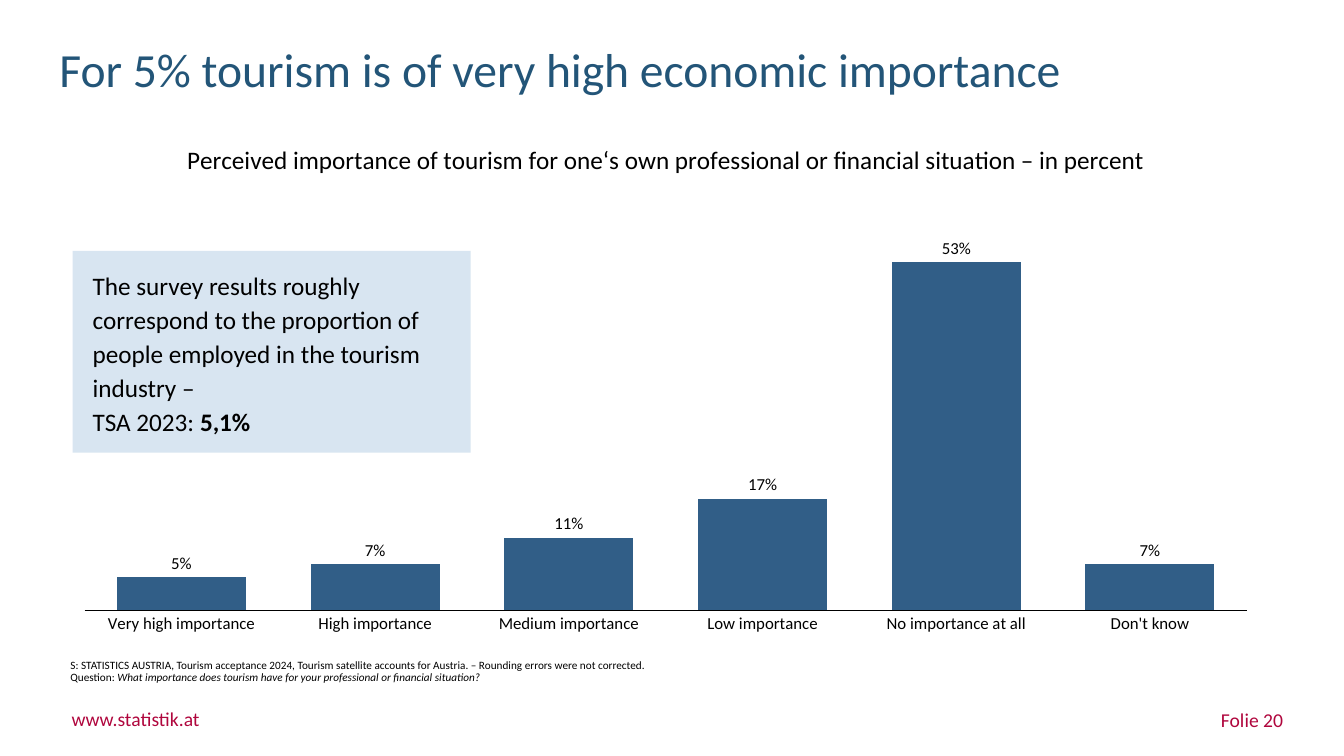
from pptx import Presentation
from pptx.chart.data import CategoryChartData
from pptx.dml.color import RGBColor
from pptx.enum.chart import XL_CHART_TYPE as ChartType, XL_LABEL_POSITION as LabelPosition
from pptx.enum.chart import XL_TICK_MARK as TickMark
from pptx.enum.shapes import MSO_SHAPE as Shape
from pptx.enum.text import MSO_ANCHOR as Anchor, PP_ALIGN as Align
from pptx.oxml import parse_xml
from pptx.oxml.ns import nsdecls
from pptx.util import Pt

FONT = "Calibri"
BLACK = RGBColor(0x00, 0x00, 0x00)
TITLE_BLUE = RGBColor(0x23, 0x55, 0x78)
BAR_BLUE = RGBColor(0x31, 0x5E, 0x87)
PALE_BLUE = RGBColor(0xD8, 0xE5, 0xF1)
FOOTER_RED = RGBColor(0xB0, 0x06, 0x3D)

IMPORTANCE = {
    "Very high importance": 0.05,
    "High importance": 0.07,
    "Medium importance": 0.11,
    "Low importance": 0.17,
    "No importance at all": 0.53,
    "Don't know": 0.07,
}


def style_font(font, size, color=BLACK):
    font.name = FONT
    font.size = Pt(size)
    font.color.rgb = color


def set_frame(frame, margin_x, margin_y, anchor=Anchor.TOP):
    frame.word_wrap = True
    frame.vertical_anchor = anchor
    frame.margin_left = frame.margin_right = Pt(margin_x)
    frame.margin_top = frame.margin_bottom = Pt(margin_y)


def write_paragraph(paragraph, text, size, color=BLACK, align=Align.LEFT, spacing=1.0):
    paragraph.text = text
    paragraph.alignment = align
    paragraph.line_spacing = spacing
    style_font(paragraph.font, size, color)


def add_text(slide, box, text, size, color=BLACK, margins=(0, 0),
             anchor=Anchor.TOP, align=Align.LEFT, spacing=1.0):
    """Add a one-paragraph text box and return its paragraph."""
    frame = slide.shapes.add_textbox(*map(Pt, box)).text_frame
    set_frame(frame, *margins, anchor)
    paragraph = frame.paragraphs[0]
    write_paragraph(paragraph, text, size, color, align, spacing)
    return paragraph


def set_plot_layout(chart, x, y, width, height):
    """Fix the inner plot area, in fractions of the chart."""
    values = "".join(f'<c:{tag} val="{value}"/>' for tag, value in
                     (("x", x), ("y", y), ("w", width), ("h", height)))
    plot_area = chart.plots[0]._element.getparent()
    for layout in plot_area.findall("{*}layout"):
        plot_area.remove(layout)
    plot_area.insert(0, parse_xml(
        f'<c:layout {nsdecls("c")}><c:manualLayout><c:layoutTarget val="inner"/>'
        f'<c:xMode val="edge"/><c:yMode val="edge"/>{values}</c:manualLayout></c:layout>'))


def add_importance_chart(slide):
    data = CategoryChartData(number_format="0%")
    data.categories = list(IMPORTANCE)
    data.add_series("Series 1", list(IMPORTANCE.values()))
    chart = slide.shapes.add_chart(
        ChartType.COLUMN_CLUSTERED, Pt(43.2), Pt(87.1), Pt(864.7), Pt(375.1), data).chart
    chart.has_legend = False
    style_font(chart.font, 10)

    title = chart.chart_title.text_frame.paragraphs[0]
    title.text = ("Perceived importance of tourism for one‘s own professional "
                  "or financial situation – in percent")
    style_font(title.font, 18)
    title.font.bold = False

    categories = chart.category_axis
    categories.major_tick_mark = categories.minor_tick_mark = TickMark.NONE
    categories.format.line.color.rgb = BLACK
    categories.format.line.width = Pt(1)
    style_font(categories.tick_labels.font, 12)

    values = chart.value_axis
    values.minimum_scale = 0
    values.maximum_scale = 0.6
    values.has_major_gridlines = False
    values.visible = False

    plot = chart.plots[0]
    plot.vary_by_categories = False
    plot.gap_width = 50
    plot.overlap = -27
    fill = plot.series[0].format.fill
    fill.solid()
    fill.fore_color.rgb = BAR_BLUE

    plot.has_data_labels = True
    labels = plot.data_labels
    labels.show_value = True
    labels.number_format = "0%"
    labels.number_format_is_linked = False
    labels.position = LabelPosition.OUTSIDE_END
    style_font(labels.font, 12)
    set_plot_layout(chart, 0.02, 0.18, 0.96, 0.75)


def add_survey_note(slide):
    note = slide.shapes.add_shape(Shape.RECTANGLE, Pt(51.8), Pt(179.3), Pt(284.4), Pt(144))
    note.shadow.inherit = False
    note.fill.solid()
    note.fill.fore_color.rgb = PALE_BLUE
    note.line.fill.background()
    frame = note.text_frame
    set_frame(frame, 14.4, 11.5)
    write_paragraph(
        frame.paragraphs[0],
        "The survey results roughly correspond to the proportion of people "
        "employed in the tourism industry –", 18, spacing=1.12)
    share = frame.add_paragraph()
    write_paragraph(share, "TSA 2023:", 18, spacing=1.12)
    run = share.add_run()
    run.text = " 5,1%"
    run.font.bold = True


def main():
    presentation = Presentation()
    presentation.slide_width = Pt(960)
    presentation.slide_height = Pt(540)
    slide = presentation.slides.add_slide(presentation.slide_layouts[6])

    add_text(slide, (35.3, 29.5, 910.8, 44.6), "For 5% tourism is of very high economic importance",
             34, TITLE_BLUE, (7.2, 3.6), Anchor.MIDDLE, spacing=0.9)
    add_importance_chart(slide)
    add_survey_note(slide)

    source = add_text(
        slide, (43.2, 466.6, 864.7, 25.2),
        "S: STATISTICS AUSTRIA, Tourism acceptance 2024, Tourism satellite accounts "
        "for Austria. – Rounding errors were not corrected.\vQuestion: ",
        8, margins=(7.2, 3.6), anchor=Anchor.BOTTOM, spacing=0.9)
    question = source.add_run()
    question.text = "What importance does tourism have for your professional or financial situation?"
    question.font.italic = True

    add_text(slide, (51.1, 504.7, 110, 17.3), "www.statistik.at", 14, FOOTER_RED)
    add_text(slide, (693.4, 505.4, 223.2, 17.3), "Folie 20", 14, FOOTER_RED, align=Align.RIGHT)
    presentation.save("out.pptx")


if __name__ == "__main__":
    main()
